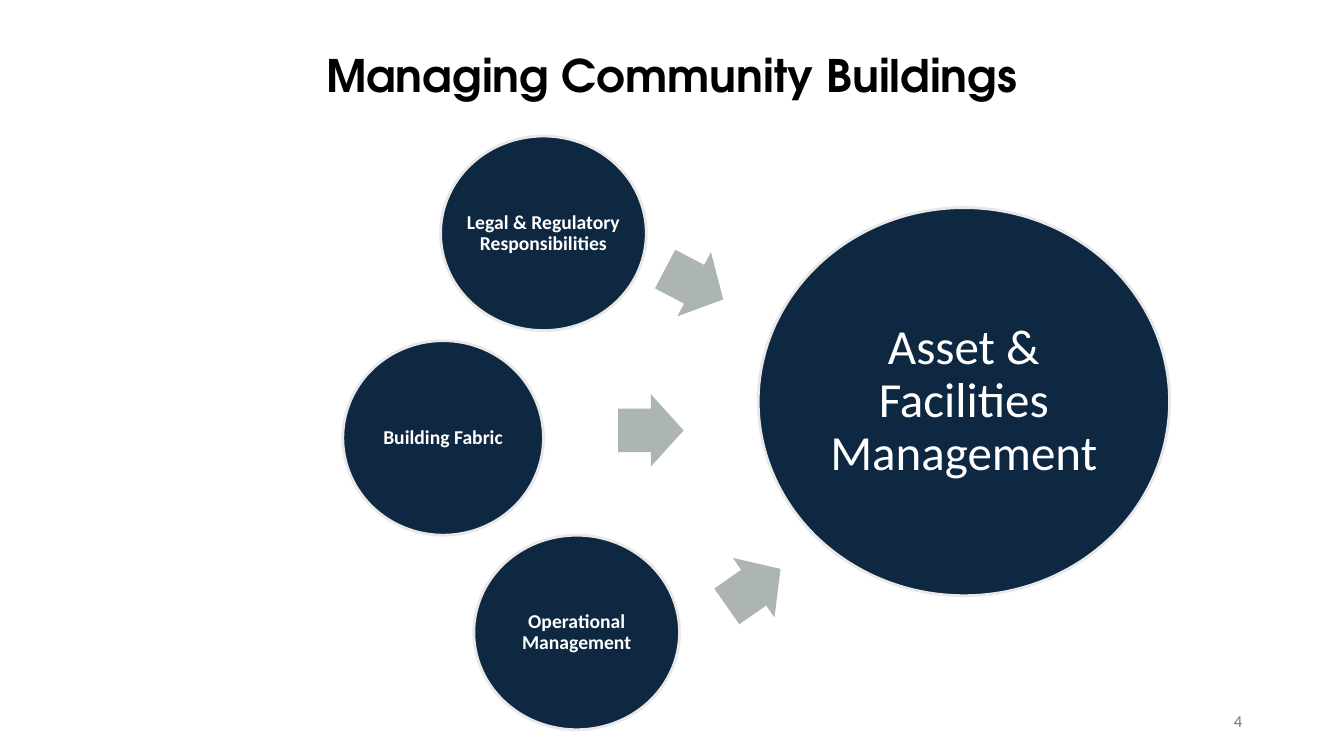
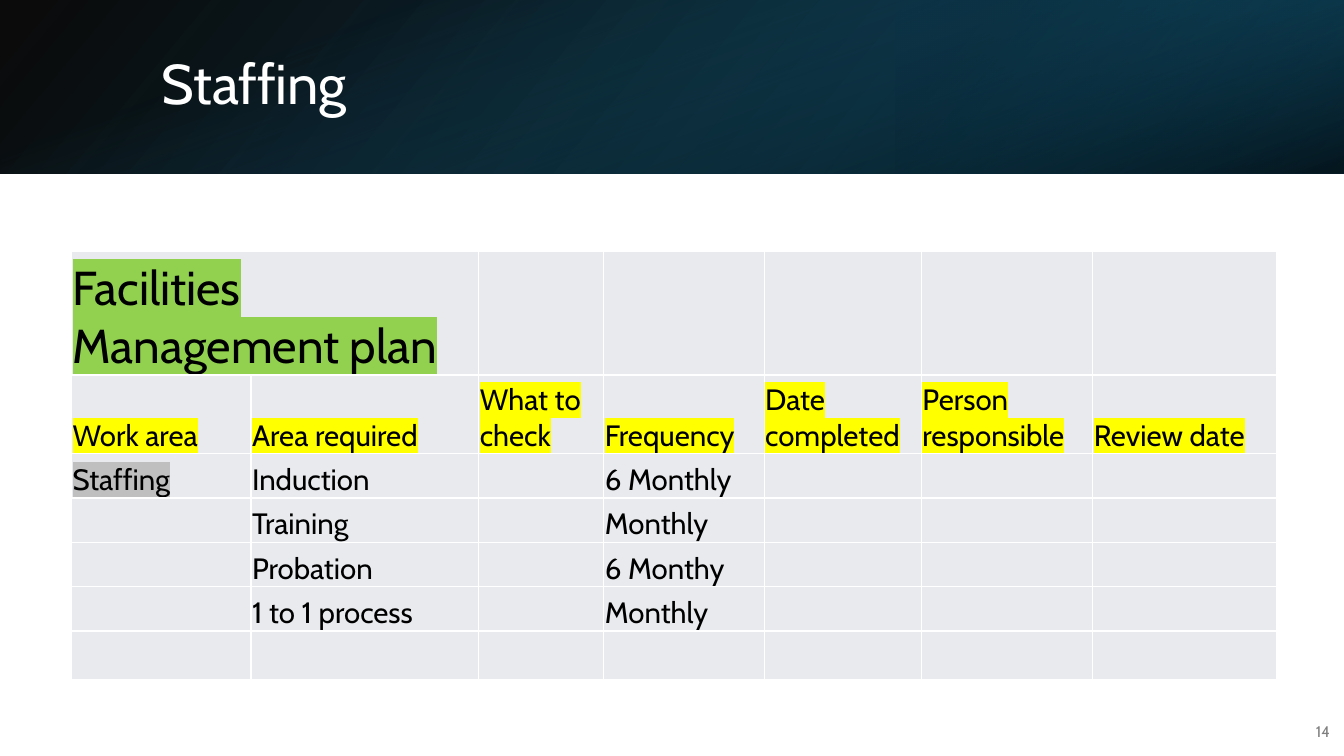
from lxml import etree
from pptx import Presentation
from pptx.dml.color import RGBColor
from pptx.enum.shapes import MSO_SHAPE
from pptx.enum.text import MSO_ANCHOR, MSO_AUTO_SIZE, PP_ALIGN
from pptx.oxml import parse_xml
from pptx.oxml.ns import nsdecls, qn
from pptx.util import Inches, Pt

LEFT, CENTER, RIGHT = PP_ALIGN.LEFT, PP_ALIGN.CENTER, PP_ALIGN.RIGHT
TOP, MIDDLE, BOTTOM = MSO_ANCHOR.TOP, MSO_ANCHOR.MIDDLE, MSO_ANCHOR.BOTTOM
NO_AUTOFIT = MSO_AUTO_SIZE.NONE
OVAL, RECT, ARROW = MSO_SHAPE.OVAL, MSO_SHAPE.RECTANGLE, MSO_SHAPE.RIGHT_ARROW
TITLE_ONLY = 5

BLACK, WHITE = "000000", "FFFFFF"
NAVY, RIM, SAGE = "0E2841", "E8E8E8", "ADB5B0"
CELL, GREEN, YELLOW, SILVER = "E8EAED", "92D050", "FFFF00", "BFBFBF"
BODY, HEADING, DIAGRAM = "Cabin", "TeX Gyre Adventor", "Calibri"


def rgb(value):
    return RGBColor.from_string(value)


def inches(values):
    return [Inches(v) for v in values]


def write(frame, text, font, size, color, align=LEFT, bold=False,
          spacing=1.0, highlight=None):
    paragraph = frame.paragraphs[0]
    paragraph.alignment = align
    paragraph.line_spacing = spacing
    paragraph.space_before = Pt(0)
    run = paragraph.add_run()
    run.text = text
    run.font.name = font
    run.font.size = Pt(size)
    run.font.bold = bold
    run.font.color.rgb = rgb(color)
    if highlight:
        mark = parse_xml(f'<a:highlight {nsdecls("a")}>'
                         f'<a:srgbClr val="{highlight}"/></a:highlight>')
        run.font._element.find(qn("a:solidFill")).addnext(mark)


def add_label(slide, box, text, font, size, color, align, inset=(0.1, 0.05), **style):
    frame = slide.shapes.add_textbox(*inches(box)).text_frame
    frame.word_wrap = True
    frame.vertical_anchor = MIDDLE
    frame.margin_left = frame.margin_right = Inches(inset[0])
    frame.margin_top = frame.margin_bottom = Inches(inset[1])
    write(frame, text, font, size, color, align, **style)


def set_title(slide, box, text, font, size, color, anchor, **style):
    title = slide.shapes.title
    title.left, title.top, title.width, title.height = inches(box)
    frame = title.text_frame
    frame.word_wrap = True
    frame.auto_size = NO_AUTOFIT
    frame.vertical_anchor = anchor
    write(frame, text, font, size, color, **style)


def add_plain_shape(slide, kind, box, fill=None, rotation=0):
    shape = slide.shapes.add_shape(kind, *inches(box))
    shape.shadow.inherit = False
    shape.rotation = rotation
    shape.line.fill.background()
    if fill:
        shape.fill.solid()
        shape.fill.fore_color.rgb = rgb(fill)
    return shape


def add_circle(slide, box, text, label_size, size, inset, bold):
    circle = add_plain_shape(slide, OVAL, box, NAVY)
    circle.line.color.rgb = rgb(RIM)
    circle.line.width = Pt(2)
    left, top, width, height = box
    label_width, label_height = label_size
    label_box = (left + (width - label_width) / 2,
                 top + (height - label_height) / 2, label_width, label_height)
    add_label(slide, label_box, text, DIAGRAM, size, WHITE, CENTER,
              (inset, inset), bold=bold, spacing=0.9)


def add_arrow(slide, left, top, rotation):
    arrow = add_plain_shape(slide, ARROW, (left, top, 0.65, 0.72), SAGE, rotation)
    arrow.adjustments[0] = 0.6
    arrow.adjustments[1] = 0.5


def add_gradient(slide, box, stops, angle, rotation=0, flip=False):
    panel = add_plain_shape(slide, RECT, box, rotation=rotation)
    if flip:
        panel._element.spPr.xfrm.set("flipH", "1")
    colors = "".join(
        f'<a:gs pos="{place * 1000}"><a:srgbClr val="{color}">'
        f'<a:alpha val="{opacity * 1000}"/></a:srgbClr></a:gs>'
        for place, color, opacity in stops)
    fill = parse_xml(
        f'<a:gradFill {nsdecls("a")} rotWithShape="1"><a:gsLst>{colors}</a:gsLst>'
        f'<a:lin ang="{angle * 60000}" scaled="0"/></a:gradFill>')
    panel._element.spPr.find(qn("a:prstGeom")).addnext(fill)


def add_band(slide, width, height):
    add_gradient(slide, (0, 0, width, height),
                 [(0, BLACK, 96), (100, "104862", 100)], 140, flip=True)
    add_gradient(slide, (width * 2 / 3, 0, width / 3, height),
                 [(19, "0B3041", 68), (100, "156082", 79)], 320, 180, True)
    add_gradient(slide, ((width - height) / 2, (height - width) / 2, height, width),
                 [(23, "156082", 0), (99, BLACK, 74)], 340, 90)


def set_borders(cell):
    properties = cell._tc.get_or_add_tcPr()
    for index, side in enumerate(("lnL", "lnR", "lnT", "lnB")):
        line = etree.Element(qn(f"a:{side}"), w=str(Pt(1)))
        solid = etree.SubElement(line, qn("a:solidFill"))
        etree.SubElement(solid, qn("a:srgbClr"), val=WHITE)
        properties.insert(index, line)


def add_plan_table(slide, left, top):
    widths = [1.78, 2.26, 1.24, 1.59, 1.56, 1.7, 1.82]
    heights = [1.23, 0.78] + [0.44] * 4 + [0.48]
    rows = [
        ["Facilities Management plan"],
        ["Work area", "Area required", "What to check", "Frequency",
         "Date completed", "Person responsible", "Review date"],
        ["Staffing", "Induction", "", "6 Monthly"],
        ["", "Training", "", "Monthly"],
        ["", "Probation", "", "6 Monthy"],
        ["", "1 to 1 process", "", "Monthly"],
        [],
    ]
    highlights = {(0, 0): GREEN, (2, 0): SILVER}
    highlights.update({(1, column): YELLOW for column in range(len(widths))})
    plan = slide.shapes.add_table(
        len(rows), len(widths),
        *inches((left, top, sum(widths), sum(heights)))).table
    plan.first_row = plan.horz_banding = False
    for column, width in zip(plan.columns, widths):
        column.width = Inches(width)
    for row, height in zip(plan.rows, heights):
        row.height = Inches(height)
    for r, words in enumerate(rows):
        for c in range(len(widths)):
            cell = plan.cell(r, c)
            cell.fill.solid()
            cell.fill.fore_color.rgb = rgb(CELL)
            set_borders(cell)
            cell.vertical_anchor = BOTTOM
            cell.margin_left = cell.margin_right = cell.margin_top = Inches(0.01)
            cell.margin_bottom = 0
            if c < len(words) and words[c]:
                write(cell.text_frame, words[c], BODY, 34 if r == 0 else 21,
                      BLACK, highlight=highlights.get((r, c)))
    plan.cell(0, 0).merge(plan.cell(0, 1))


def build_buildings_slide(slide):
    add_label(slide, (9.42, 6.95, 3, 0.4), "4", DIAGRAM, 12, "797979", RIGHT)
    set_title(slide, (1.26, 0.42, 10.81, 0.64), "Managing Community Buildings",
              HEADING, 32, BLACK, TOP, align=CENTER, bold=True)
    topics = [
        ("Legal & Regulatory Responsibilities", (4.37, 1.35, 2.04, 1.93), 1.68),
        ("Building Fabric", (3.4, 3.38, 1.99, 1.93), 1.44),
        ("Operational Management", (4.7, 5.31, 2.04, 1.93), 1.44),
    ]
    for text, box, label_width in topics:
        add_circle(slide, box, text, (label_width, 1.36), 14, 0.02, True)
    add_circle(slide, (7.52, 2.06, 4.08, 3.85), "Asset & Facilities Management",
               (3.05, 2.72), 35, 0.05, False)
    for left, top, rotation in [(6.56, 2.46, 27.6), (6.13, 3.91, 0), (7.15, 5.47, 325)]:
        add_arrow(slide, left, top, rotation)


def build_staffing_slide(slide):
    add_band(slide, 13.33, 1.72)
    title = slide.shapes.title._element
    title.getparent().append(title)
    set_title(slide, (1.5, 0.38, 10.98, 0.96), "Staffing", BODY, 40, WHITE,
              MIDDLE, spacing=0.9)
    add_label(slide, (12.8, 7.06, 0.49, 0.4), "14", BODY, 11, "808080", RIGHT)
    add_plan_table(slide, 0.71, 2.49)


def main():
    deck = Presentation()
    deck.slide_width, deck.slide_height = inches((13.33, 7.5))
    for build in (build_buildings_slide, build_staffing_slide):
        build(deck.slides.add_slide(deck.slide_layouts[TITLE_ONLY]))
    deck.save("out.pptx")


if __name__ == "__main__":
    main()
